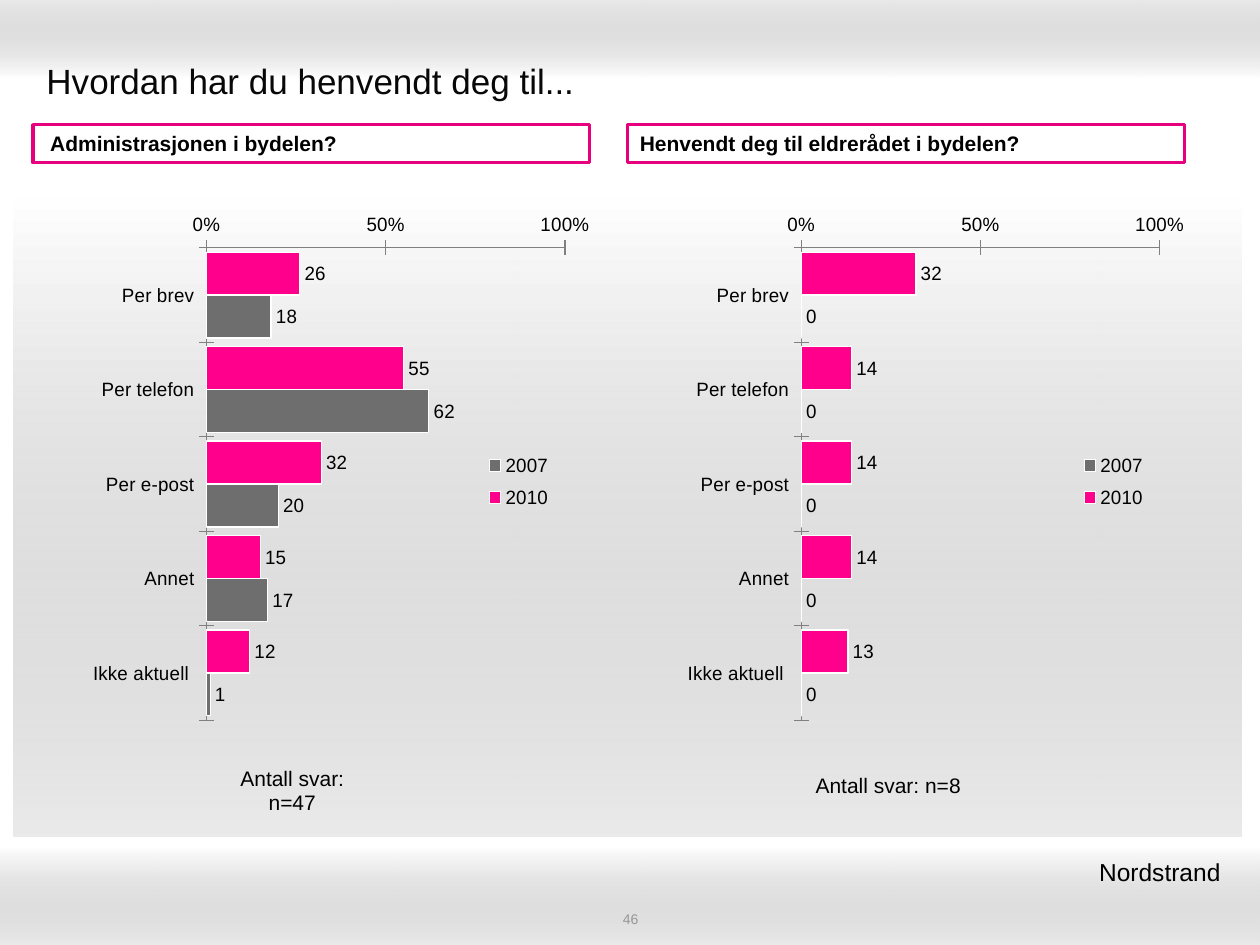
from lxml import etree
from pptx import Presentation
from pptx.chart.data import CategoryChartData
from pptx.dml.color import RGBColor
from pptx.enum.chart import XL_CHART_TYPE, XL_LABEL_POSITION, XL_LEGEND_POSITION, XL_TICK_MARK
from pptx.enum.shapes import MSO_SHAPE
from pptx.enum.text import MSO_ANCHOR, PP_ALIGN
from pptx.oxml.ns import qn
from pptx.util import Inches, Pt

PINK, GREY, BLACK, WHITE = "FF008C", "6E6E6E", "000000", "FFFFFF"
CATEGORIES = ["Per brev", "Per telefon", "Per e-post", "Annet", "Ikke aktuell "]
NO_TABLE_STYLE = "{2D5ABB26-0587-4C30-8999-92F81FD0307C}"


def colour(value):
    return RGBColor.from_string(value)


def place(left, top, width, height):
    return [Inches(length) for length in (left, top, width, height)]


def add_layout(parent, before, values, inner=False):
    """Put a manual layout into a chart part, just before the named child."""
    for old in parent.findall(qn("c:layout")):
        parent.remove(old)
    layout = etree.Element(qn("c:layout"))
    manual = etree.SubElement(layout, qn("c:manualLayout"))
    settings = [("layoutTarget", "inner")] if inner else []
    settings += [("xMode", "edge"), ("yMode", "edge")]
    settings += zip("xywh", values)
    for name, value in settings:
        etree.SubElement(manual, qn(f"c:{name}")).set("val", str(value))
    parent.find(qn(before)).addprevious(layout)


class SlideBuilder:
    font = "Arial"

    def __init__(self, slide):
        self.slide = slide

    def add_span(self, frame, text, size, color=BLACK, bold=False, align=PP_ALIGN.LEFT):
        para = frame.paragraphs[0]
        para.alignment = align
        span = para.add_run()
        span.text = text
        span.font.name = self.font
        span.font.size = Pt(size)
        span.font.bold = bold
        span.font.color.rgb = colour(color)

    def text(self, area, text, size, color=BLACK, align=PP_ALIGN.LEFT,
             anchor=MSO_ANCHOR.MIDDLE, margin=0.05):
        frame = self.slide.shapes.add_textbox(*place(*area)).text_frame
        frame.word_wrap = True
        frame.vertical_anchor = anchor
        frame.margin_top = frame.margin_bottom = Inches(margin)
        self.add_span(frame, text, size, color, align=align)

    def rectangle(self, area):
        box = self.slide.shapes.add_shape(MSO_SHAPE.RECTANGLE, *place(*area))
        box.shadow.inherit = False
        return box

    def gradient(self, area, angle):
        """A band from solid white to nearly transparent grey."""
        band = self.rectangle(area)
        band.line.fill.background()
        band.fill.gradient()
        band.fill.gradient_angle = angle
        for stop, position, color in zip(band.fill.gradient_stops, (0, 1), (WHITE, "999999")):
            stop.position = position
            stop.color.rgb = colour(color)
        last_color = list(band._element.spPr.iter(qn("a:srgbClr")))[-1]
        etree.SubElement(last_color, qn("a:alpha")).set("val", "20000")

    def heading(self, area, text):
        box = self.rectangle(area)
        box.fill.solid()
        box.fill.fore_color.rgb = colour(WHITE)
        box.line.color.rgb = colour("E7007E")
        box.line.width = Pt(2)
        box.text_frame.word_wrap = True
        box.text_frame.vertical_anchor = MSO_ANCHOR.TOP
        self.add_span(box.text_frame, text, 12, bold=True)

    def answer_count(self, area, text):
        table = self.slide.shapes.add_table(1, 1, *place(*area)).table
        table.first_row = table.horz_banding = False
        table._tbl.tblPr.find(qn("a:tableStyleId")).text = NO_TABLE_STYLE
        cell = table.cell(0, 0)
        cell.fill.background()
        cell.vertical_anchor = MSO_ANCHOR.MIDDLE
        self.add_span(cell.text_frame, text, 12, align=PP_ALIGN.CENTER)

    def bar_chart(self, area, series, overlay):
        data = CategoryChartData(number_format="0")
        data.categories = CATEGORIES
        for name, values in series.items():
            data.add_series(name, values)
        chart = self.slide.shapes.add_chart(
            XL_CHART_TYPE.BAR_CLUSTERED, *place(*area), data).chart
        chart.has_title = False
        chart.font.name = self.font
        chart.font.size = Pt(11)
        chart.font.color.rgb = colour(BLACK)

        # Axes
        categories, scale = chart.category_axis, chart.value_axis
        categories.reverse_order = True
        scale.minimum_scale, scale.maximum_scale, scale.major_unit = 0, 100, 50
        scale.has_major_gridlines = False
        scale.tick_labels.number_format = "General\\%"
        scale.tick_labels.number_format_is_linked = False
        for axis in (categories, scale):
            axis.major_tick_mark = XL_TICK_MARK.CROSS
            axis.format.line.color.rgb = colour("808080")
            axis.format.line.width = Pt(0.75)

        # Bars and their values
        plot = chart.plots[0]
        plot.gap_width, plot.overlap, plot.vary_by_categories = 20, 0, False
        for bars, color in zip(plot.series, (PINK, GREY)):
            bars.format.fill.solid()
            bars.format.fill.fore_color.rgb = colour(color)
            bars.format.line.color.rgb = colour(WHITE)
            bars.format.line.width = Pt(0.75)
            labels = bars.data_labels
            labels.show_value = True
            labels.number_format = "0"
            labels.number_format_is_linked = False
            labels.position = XL_LABEL_POSITION.OUTSIDE_END

        # Legend and plot area
        chart.has_legend = True
        chart.legend.position = XL_LEGEND_POSITION.RIGHT
        chart.legend.include_in_layout = overlay
        add_layout(chart.legend._element, "c:overlay", (0.82, 0.45, 0.15, 0.14))
        plot_area = chart._chartSpace.chart.plotArea
        add_layout(plot_area, "c:barChart", (0.32, 0.07, 0.66, 0.91), inner=True)


def main():
    deck = Presentation()
    deck.slide_width, deck.slide_height = Inches(10), Inches(7.5)
    page = SlideBuilder(deck.slides.add_slide(deck.slide_layouts[6]))

    # Background bands
    page.gradient((0, 0, 10, 0.62), 90)
    page.gradient((0, 6.72, 10, 0.78), 270)
    page.gradient((0.11, 1.56, 9.74, 5.08), 270)

    # Title, district and page number
    page.text((0.27, 0.36, 9.45, 0.55), "Hvordan har du henvendt deg til...", 20, "080808")
    page.text((6.1, 6.75, 3.74, 0.34), "Nordstrand ", 14,
              align=PP_ALIGN.RIGHT, anchor=MSO_ANCHOR.TOP)
    page.text((3.42, 7.22, 3.17, 0.14), "46", 8, "969696", PP_ALIGN.CENTER, margin=0)

    # One column for each question
    columns = [
        (0.26, " Administrasjonen i bydelen?", 1.61, "Antall svar: n=47", False,
         {"2010": (26, 55, 32, 15, 12), "2007": (18, 62, 20, 17, 1)}),
        (4.98, "Henvendt deg til eldrerådet i bydelen?", 6.34, "Antall svar: n=8", True,
         {"2010": (32, 14, 14, 14, 13), "2007": (0, 0, 0, 0, 0)}),
    ]
    for left, question, count_left, count, overlay, series in columns:
        page.heading((left, 0.99, 4.42, 0.3), question)
        page.bar_chart((left, 1.68, 4.42, 4.12), series, overlay)
        page.answer_count((count_left, 6.03, 1.42, 0.42), count)

    deck.save("out.pptx")


if __name__ == "__main__":
    main()
